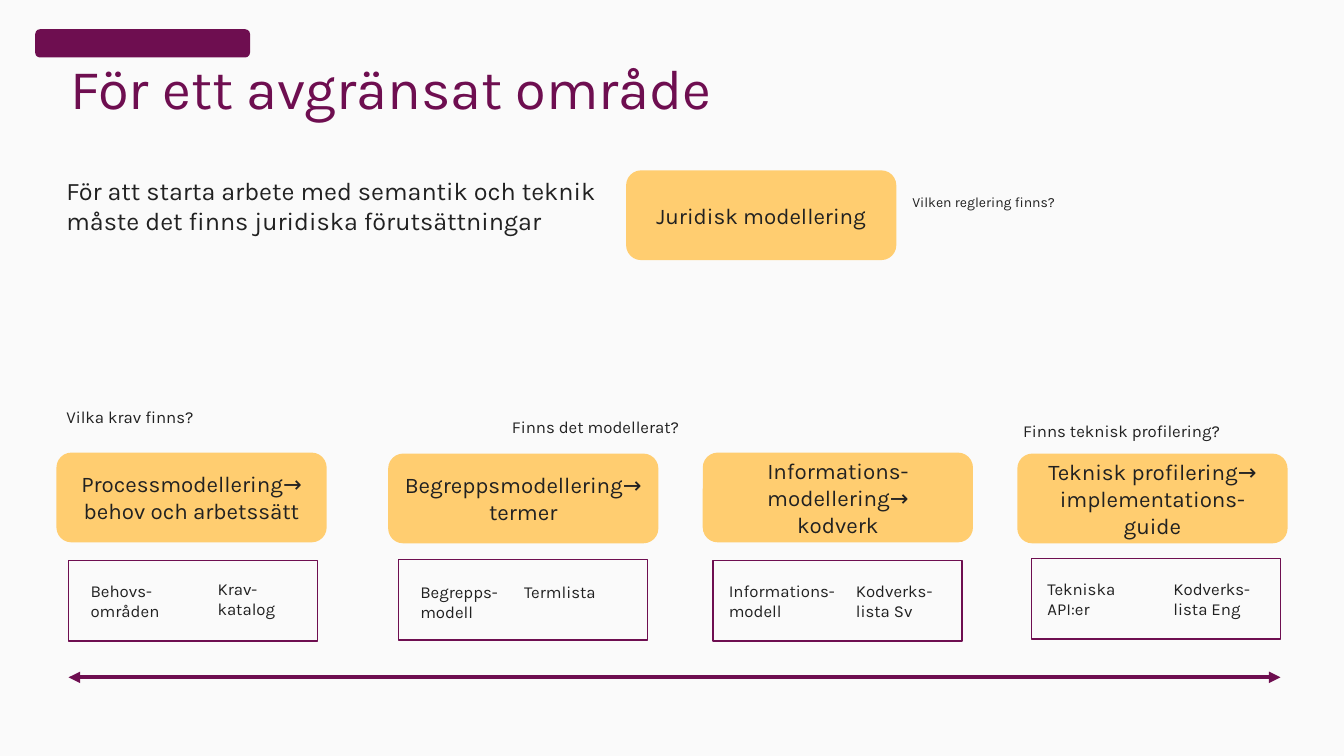
"""Build the slide on modelling steps for a delimited area."""
from lxml import etree
from pptx import Presentation
from pptx.dml.color import RGBColor
from pptx.enum.shapes import MSO_CONNECTOR, MSO_SHAPE
from pptx.enum.text import MSO_ANCHOR, PP_ALIGN
from pptx.oxml.ns import qn
from pptx.util import Inches, Pt

CARD = MSO_SHAPE.FLOWCHART_ALTERNATE_PROCESS
RECT = MSO_SHAPE.RECTANGLE
PILL = MSO_SHAPE.ROUNDED_RECTANGLE
STRAIGHT = MSO_CONNECTOR.STRAIGHT
TOP, MIDDLE, BOTTOM = MSO_ANCHOR.TOP, MSO_ANCHOR.MIDDLE, MSO_ANCHOR.BOTTOM
LEFT, CENTER = PP_ALIGN.LEFT, PP_ALIGN.CENTER

FONT = "Karla"
PLUM, AMBER, INK, PAPER = "6E0E50", "FFCD70", "212121", "FAFAFA"
CARD_W, CARD_H = 2.68, 0.89
FRAME_W, FRAME_H = 2.47, 0.8

TITLE = "För ett avgränsat område"
LOGO_BOX = (0.35, 0.29, 2.13, 0.28)
LEGAL_CARD = (6.21, 1.69, ["Juridisk modellering"])
NOTES = [
    ("För att starta arbete med semantik och teknik måste det finns juridiska förutsättningar",
     (0.56, 1.69, 5.97, 0.71), 18),
    ("Vilken reglering finns?", (8.95, 1.87, 3.96, 0.27), 10),
    ("Vilka krav finns?", (0.56, 3.99, 2.91, 0.3), 12),
    ("Finns det modellerat?", (4.98, 4.09, 4.67, 0.3), 12),
    ("Finns teknisk profilering?", (10.05, 4.12, 2.87, 0.3), 12),
]
STAGES = [
    {"card": (0.56, 4.49, ["Processmodellering→", "behov och arbetssätt"]),
     "frame": (0.68, 5.56),
     "results": [("Behovs-områden", (0.8, 5.71, 0.97, 0.5)),
                 ("Krav-katalog", (2.06, 5.69, 1.03, 0.5))]},
    {"card": (3.85, 4.5, ["Begreppsmodellering→", "termer"]),
     "frame": (3.95, 5.55),
     "results": [("Begrepps-modell", (4.07, 5.72, 1.03, 0.5)),
                 ("Termlista", (5.1, 5.72, 0.97, 0.3))]},
    {"card": (6.97, 4.49, ["Informations-modellering→", "kodverk"]),
     "frame": (7.07, 5.56),
     "results": [("Informations-modell", (7.13, 5.71, 1.27, 0.5)),
                 ("Kodverks-lista Sv", (8.39, 5.71, 1, 0.5))]},
    {"card": (10.09, 4.5, ["Teknisk profilering→ implementations-guide"]),
     "frame": (10.23, 5.54),
     "results": [("Tekniska API:er", (10.29, 5.69, 1.27, 0.5)),
                 ("Kodverks-lista Eng", (11.54, 5.69, 1.03, 0.5))]},
]
ARROW_Y = 6.72


def rgb(value):
    return RGBColor.from_string(value)


def inches(box):
    return [Inches(v) for v in box]


def write(sp, lines, size, color=INK, align=LEFT, anchor=TOP):
    tf = sp.text_frame
    tf.word_wrap = True
    tf.vertical_anchor = anchor
    for i, line in enumerate(lines):
        p = tf.add_paragraph() if i else tf.paragraphs[0]
        p.alignment = align
        r = p.add_run()
        r.text = line
        r.font.name, r.font.size = FONT, Pt(size)
        r.font.color.rgb = rgb(color)
    return tf


def add_text(shapes, text, box, size, **style):
    return write(shapes.add_textbox(*inches(box)), [text], size, **style)


def add_box(shapes, kind, box, fill=None, line=None):
    sp = shapes.add_shape(kind, *inches(box))
    sp.shadow.inherit = False
    if fill:
        sp.fill.solid()
        sp.fill.fore_color.rgb = rgb(fill)
    else:
        sp.fill.background()
    if line:
        sp.line.color.rgb = rgb(line)
        sp.line.width = Pt(1)
    else:
        sp.line.fill.background()
    return sp


def add_card(shapes, x, y, lines):
    sp = add_box(shapes, CARD, (x, y, CARD_W, CARD_H), fill=AMBER)
    write(sp, lines, 16, align=CENTER, anchor=MIDDLE)


def add_double_arrow(shapes, x1, x2, y):
    cx = shapes.add_connector(STRAIGHT, *inches((x1, y, x2, y)))
    cx.line.color.rgb = rgb(PLUM)
    cx.line.width = Pt(2.75)
    ln = cx.line._get_or_add_ln()
    for end in ("a:headEnd", "a:tailEnd"):
        etree.SubElement(ln, qn(end), type="triangle")
    etree.SubElement(cx._element.spPr, qn("a:effectLst"))


def main():
    prs = Presentation()
    prs.slide_width, prs.slide_height = Inches(13.33), Inches(7.5)
    s = prs.slides.add_slide(prs.slide_layouts[6])
    s.background.fill.solid()
    s.background.fill.fore_color.rgb = rgb(PAPER)

    add_box(s.shapes, PILL, LOGO_BOX, fill=PLUM)
    tf = add_text(s.shapes, TITLE, (0.7, 0.6, 11.46, 0.61), 40, color=PLUM, anchor=BOTTOM)
    tf.margin_left = tf.margin_right = tf.margin_top = tf.margin_bottom = 0
    tf.paragraphs[0].line_spacing = 0.9

    add_card(s.shapes, *LEGAL_CARD)
    for text, box, size in NOTES:
        add_text(s.shapes, text, box, size)

    for stage in STAGES:
        add_card(s.shapes, *stage["card"])
        group = s.shapes.add_group_shape()
        add_box(group.shapes, RECT, (*stage["frame"], FRAME_W, FRAME_H), line=PLUM)
        for text, box in stage["results"]:
            add_text(group.shapes, text, box, 12)

    arrow_start = STAGES[0]["frame"][0]
    arrow_end = STAGES[-1]["frame"][0] + FRAME_W
    add_double_arrow(s.shapes, arrow_start, arrow_end, ARROW_Y)
    prs.save("out.pptx")


if __name__ == "__main__":
    main()
